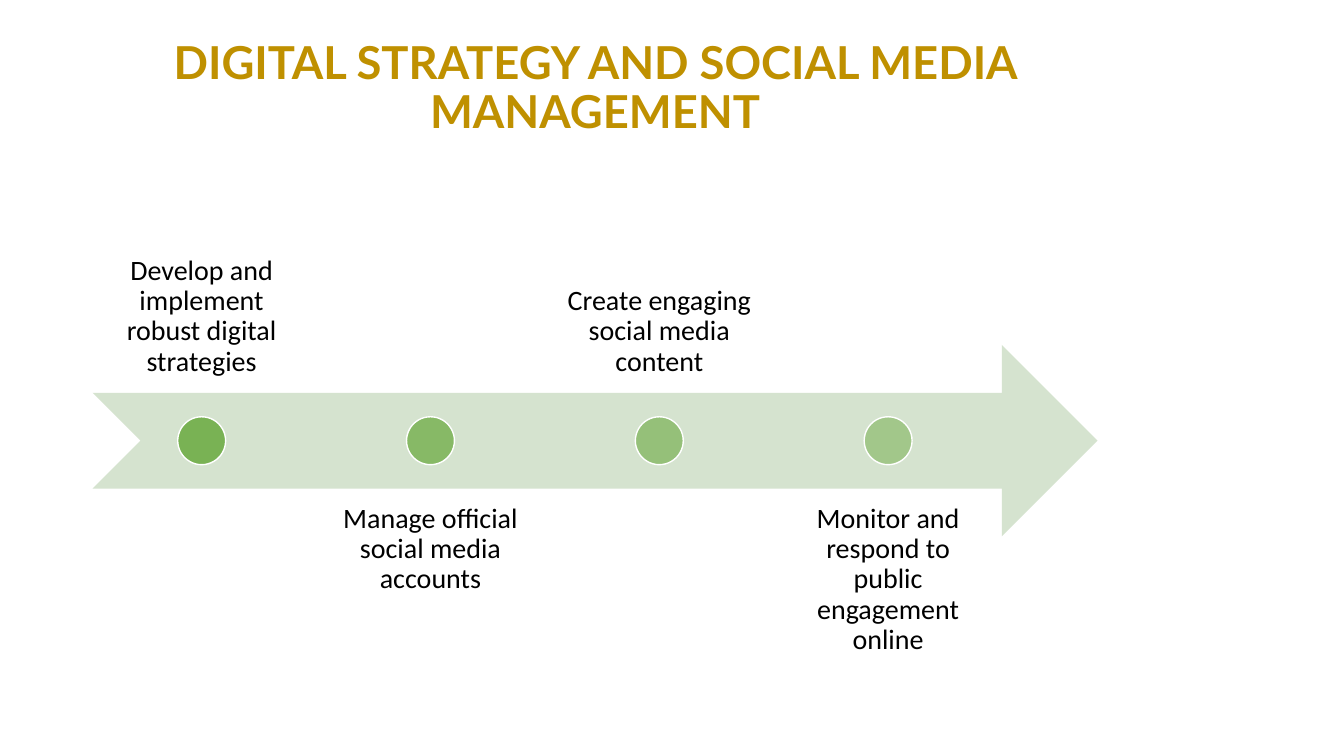
from pptx import Presentation
from pptx.dml.color import RGBColor
from pptx.enum.shapes import MSO_SHAPE as SHAPE
from pptx.enum.text import MSO_ANCHOR as ANCHOR, PP_ALIGN as ALIGN
from pptx.oxml import parse_xml
from pptx.oxml.ns import nsdecls, qn
from pptx.util import Pt

COLORS = {"title": "BF9000", "text": "000000", "arrow": "D5E3CF",
          "dot": "70AD47", "outline": "FFFFFF"}
TITLE_FONT = {"name": "Lato", "size": Pt(32.4), "bold": True}
LABEL_FONT = {"name": "Calibri", "size": Pt(20)}
STEPS = ["Develop and implement robust digital strategies",
         "Manage official social media accounts",
         "Create engaging social media content",
         "Monitor and respond to public engagement online"]


def rgb(key):
    """Return the named colour."""
    return RGBColor.from_string(COLORS[key])


def add_text(slide, box, text, font, color, frame):
    """Add a centred text box with the given font and frame settings."""
    tf = slide.shapes.add_textbox(*map(Pt, box)).text_frame
    tf.word_wrap = True
    for name, value in frame.items():
        setattr(tf, name, value)
    p = tf.paragraphs[0]
    p.alignment, p.line_spacing = ALIGN.CENTER, 0.9
    r = p.add_run()
    r.text = text
    for name, value in font.items():
        setattr(r.font, name, value)
    r.font.color.rgb = rgb(color)


def add_solid(slide, kind, box, color):
    """Add a filled shape without outline or shadow."""
    sp = slide.shapes.add_shape(kind, *map(Pt, box))
    sp.shadow.inherit = False
    sp.fill.solid()
    sp.fill.fore_color.rgb = rgb(color)
    sp.line.fill.background()
    return sp


def add_dot(slide, box, opacity):
    """Add a translucent, outlined milestone dot; opacity is in percent."""
    sp = add_solid(slide, SHAPE.OVAL, box, "dot")
    clr = sp.fill._xPr.find(qn("a:solidFill"))[0]
    clr.append(parse_xml(f'<a:alpha {nsdecls("a")} val="{round(opacity * 1000)}"/>'))
    sp.line.color.rgb = rgb("outline")
    sp.line.width = Pt(1)


def add_title(slide, box):
    """Add the slide title at the top of its box."""
    add_text(slide, box, "DIGITAL STRATEGY AND SOCIAL MEDIA MANAGEMENT",
             TITLE_FONT, "title",
             {"vertical_anchor": ANCHOR.TOP, "margin_top": 0})


def add_timeline(slide, box):
    """Add the arrow with dots and labels alternating above and below it."""
    x, y, w, h = box
    band = 0.4 * h
    dot = band / 4
    add_solid(slide, SHAPE.NOTCHED_RIGHT_ARROW, (x, y + 0.3 * h, w, band), "arrow")
    gaps = len(STEPS) - 1
    label_w = 0.9 * w / (len(STEPS) + 0.05 * gaps)
    margins = {f"margin_{side}": Pt(11.2) for side in ("left", "top", "right", "bottom")}
    for i, step in enumerate(STEPS):
        left = x + i * 1.05 * label_w
        below = i % 2
        anchor = ANCHOR.TOP if below else ANCHOR.BOTTOM
        add_text(slide, (left, y + below * 0.6 * h, label_w, band), step,
                 LABEL_FONT, "text", {"vertical_anchor": anchor, **margins})
        add_dot(slide, (left + (label_w - dot) / 2, y + (h - dot) / 2, dot, dot),
                90 - 40 * i / gaps)


def main():
    """Build the slide and save it."""
    prs = Presentation()
    prs.slide_width, prs.slide_height = Pt(960), Pt(540)
    slide = prs.slides.add_slide(prs.slide_layouts[6])
    add_title(slide, (66.2, 28.8, 717.8, 104.4))
    add_timeline(slide, (66.2, 143.8, 717.8, 342))
    prs.save("out.pptx")


if __name__ == "__main__":
    main()
